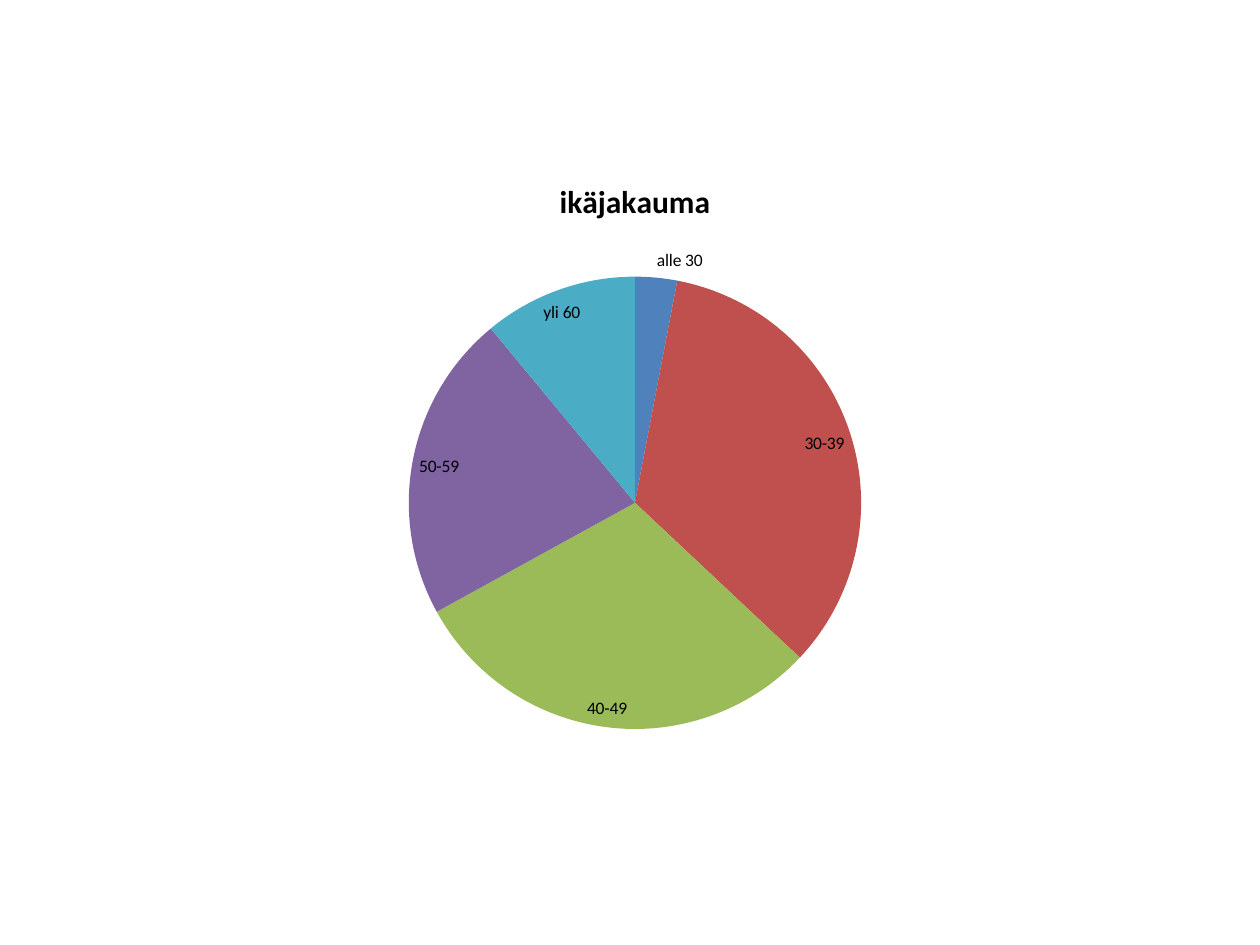
"""Build a slide with a pie chart of the age distribution."""
from lxml import etree
from pptx import Presentation
from pptx.chart import data
from pptx.dml.color import RGBColor
from pptx.enum import chart as kinds
from pptx.oxml import ns
from pptx.util import Inches, Pt

BLACK = RGBColor(0x00, 0x00, 0x00)
BLUE = RGBColor(0x4F, 0x81, 0xBD)
RED = RGBColor(0xC0, 0x50, 0x4D)
GREEN = RGBColor(0x9B, 0xBB, 0x59)
PURPLE = RGBColor(0x80, 0x64, 0xA2)
TEAL = RGBColor(0x4B, 0xAC, 0xC6)

AGE_GROUPS = [
    ("alle 30", 3, BLUE),
    ("30-39", 34, RED),
    ("40-49", 30, GREEN),
    ("50-59", 22, PURPLE),
    ("yli 60", 11, TEAL),
]

deck = Presentation()
deck.slide_width = Inches(10)
deck.slide_height = Inches(7.5)
page = deck.slides.add_slide(deck.slide_layouts[6])

ages = data.CategoryChartData()
ages.categories = [name for name, share, color in AGE_GROUPS]
ages.add_series("Series 1", [share for name, share, color in AGE_GROUPS])
frame = page.shapes.add_chart(
    kinds.XL_CHART_TYPE.PIE,
    Inches(1.3), Inches(1.23), Inches(7.48), Inches(4.72), ages)
pie = frame.chart
pie.has_legend = False
pie.font.name = "Calibri"
pie.font.size = Pt(10)
pie.font.color.rgb = BLACK

pie.has_title = True
heading = pie.chart_title.text_frame
heading.text = "ikäjakauma"
font = heading.paragraphs[0].runs[0].font
font.name = "Calibri"
font.size = Pt(18)
font.bold = True
font.color.rgb = BLACK

plot = pie.plots[0]
plot.vary_by_categories = True
for index, (name, share, color) in enumerate(AGE_GROUPS):
    fill = plot.series[0].points[index].format.fill
    fill.solid()
    fill.fore_color.rgb = color

labels = plot.series[0].data_labels
labels.show_category_name = True
labels.show_value = False
labels.show_percentage = False
labels.show_legend_key = False
labels.position = kinds.XL_LABEL_POSITION.BEST_FIT

area = pie.element.find(".//" + ns.qn("c:plotArea"))
layout = area.find(ns.qn("c:layout"))
if layout is None:
    layout = etree.Element(ns.qn("c:layout"))
    area.insert(0, layout)
manual = etree.SubElement(layout, ns.qn("c:manualLayout"))
for tag, value in [("layoutTarget", "inner"), ("xMode", "edge"), ("yMode", "edge"),
                   ("x", "0.26"), ("y", "0.2"), ("w", "0.48"), ("h", "0.77")]:
    etree.SubElement(manual, ns.qn("c:" + tag)).set("val", value)

deck.save("out.pptx")
